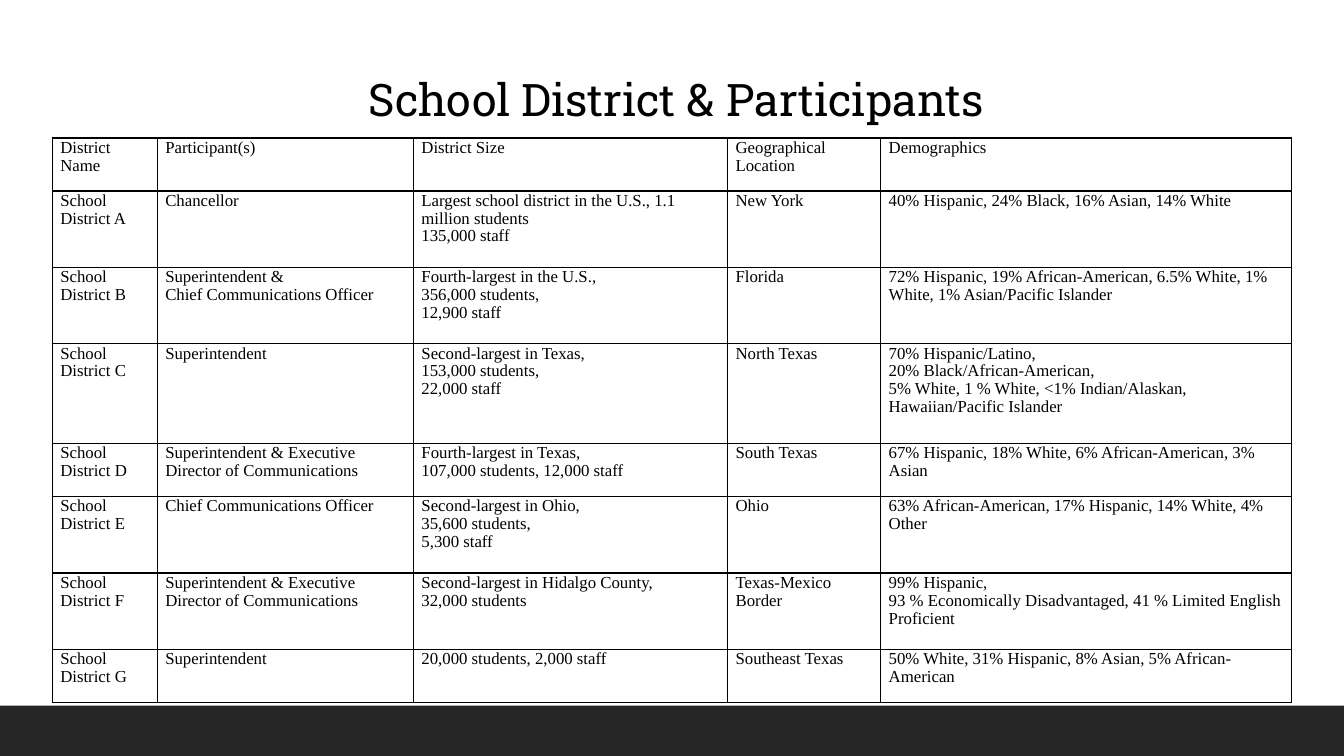
"""Build the slide that lists the school districts and their participants."""
from typing import Any, NamedTuple

from lxml import etree
from pptx import Presentation
from pptx.dml.color import RGBColor
from pptx.enum import shapes, text
from pptx.oxml import ns
from pptx.util import Pt

BLACK, CHARCOAL = "000000", "262626"
SLIDE_WIDTH, SLIDE_HEIGHT = 960, 540
FOOTER_HEIGHT = 36
COLUMN_WIDTHS = (75, 183, 224.4, 109.4, 293.6)
LINE_HEIGHT, ROW_PADDING = 16.8, 4.2
BORDER_WIDTH = 1
CELL_FORMAT = {
    "margin_left": Pt(5.7),
    "margin_right": Pt(5.7),
    "margin_top": Pt(0.7),
    "margin_bottom": Pt(0),
    "vertical_anchor": text.MSO_ANCHOR.TOP,
}
TITLE_FORMAT = {
    "word_wrap": True,
    "auto_size": text.MSO_AUTO_SIZE.NONE,
    "vertical_anchor": text.MSO_ANCHOR.TOP,
}


class District(NamedTuple):
    name: str
    participants: str
    size: str
    location: str
    demographics: str
    lines: int


DISTRICTS = [
    District("District Name", "Participant(s)", "District Size",
             "Geographical Location", "Demographics", 2),
    District("School District A", "Chancellor",
             "Largest school district in the U.S., 1.1 million students\n135,000 staff",
             "New York", "40% Hispanic, 24% Black, 16% Asian, 14% White", 3),
    District("School District B", "Superintendent &\nChief Communications Officer",
             "Fourth-largest in the U.S.,\n356,000 students,\n12,900 staff", "Florida",
             "72% Hispanic, 19% African-American, 6.5% White, 1% White, "
             "1% Asian/Pacific Islander", 3),
    District("School District C", "Superintendent",
             "Second-largest in Texas,\n153,000 students,\n22,000 staff", "North Texas",
             "70% Hispanic/Latino,\n20% Black/African-American,\n"
             "5% White, 1 % White, <1% Indian/Alaskan, Hawaiian/Pacific Islander", 4),
    District("School District D", "Superintendent & Executive Director of Communications",
             "Fourth-largest in Texas,\n107,000 students, 12,000 staff", "South Texas",
             "67% Hispanic, 18% White, 6% African-American, 3% Asian", 2),
    District("School District E", "Chief Communications Officer",
             "Second-largest in Ohio,\n35,600 students,\n5,300 staff", "Ohio",
             "63% African-American, 17% Hispanic, 14% White, 4% Other", 3),
    District("School District F", "Superintendent & Executive Director of Communications",
             "Second-largest in Hidalgo County,\n32,000 students", "Texas-Mexico Border",
             "99% Hispanic,\n93 % Economically Disadvantaged, "
             "41 % Limited English Proficient", 3),
    District("School District G", "Superintendent", "20,000 students, 2,000 staff",
             "Southeast Texas", "50% White, 31% Hispanic, 8% Asian, 5% African-American", 2),
]


def apply_format(target: Any, values: dict[str, Any]) -> None:
    for attribute, value in values.items():
        setattr(target, attribute, value)


def paint(color_format: Any, hex_color: str) -> None:
    color_format.rgb = RGBColor.from_string(hex_color)


def style_paragraph(paragraph: Any, typeface: str, size: float, spacing: float) -> None:
    apply_format(paragraph, {"alignment": text.PP_ALIGN.LEFT, "line_spacing": spacing})
    for run in paragraph.runs:
        apply_format(run.font, {"name": typeface, "size": Pt(size)})
        paint(run.font.color, BLACK)


def add_borders(cell: Any) -> None:
    properties = cell._tc.get_or_add_tcPr()
    for position, side in enumerate(("lnL", "lnR", "lnT", "lnB")):
        border = etree.Element(ns.qn(f"a:{side}"), w=str(Pt(BORDER_WIDTH)))
        fill = etree.SubElement(border, ns.qn("a:solidFill"))
        etree.SubElement(fill, ns.qn("a:srgbClr"), val=BLACK)
        properties.insert(position, border)


def add_footer(slide: Any) -> None:
    footer = slide.shapes.add_shape(
        shapes.MSO_SHAPE.RECTANGLE, Pt(0), Pt(SLIDE_HEIGHT - FOOTER_HEIGHT),
        Pt(SLIDE_WIDTH), Pt(FOOTER_HEIGHT))
    footer.shadow.inherit = False
    footer.fill.solid()
    paint(footer.fill.fore_color, CHARCOAL)
    footer.line.fill.background()


def add_heading(slide: Any) -> None:
    heading = slide.shapes.title
    apply_format(heading, {"left": Pt(256.3), "top": Pt(47.5),
                           "width": Pt(507), "height": Pt(46)})
    heading.text_frame.text = "School District & Participants"
    apply_format(heading.text_frame, TITLE_FORMAT)
    style_paragraph(heading.text_frame.paragraphs[0], "Roboto Slab", 32, 1)


def add_district_table(slide: Any, districts: list[District]) -> None:
    heights = [district.lines * LINE_HEIGHT + ROW_PADDING for district in districts]
    table = slide.shapes.add_table(
        len(districts), len(COLUMN_WIDTHS), Pt(37.4), Pt(98.6),
        Pt(sum(COLUMN_WIDTHS)), Pt(sum(heights))).table
    apply_format(table, {"first_row": False, "horz_banding": False})
    for column, width in zip(table.columns, COLUMN_WIDTHS):
        column.width = Pt(width)
    for row, district, height in zip(table.rows, districts, heights):
        row.height = Pt(height)
        for cell, wording in zip(row.cells, district[:-1]):
            cell.text = wording
            apply_format(cell, CELL_FORMAT)
            cell.fill.background()
            add_borders(cell)
            for paragraph in cell.text_frame.paragraphs:
                style_paragraph(paragraph, "Times New Roman", 12, 0.96)


def main() -> None:
    presentation = Presentation()
    apply_format(presentation, {"slide_width": Pt(SLIDE_WIDTH),
                                "slide_height": Pt(SLIDE_HEIGHT)})
    slide = presentation.slides.add_slide(presentation.slide_layouts.get_by_name("Title Only"))
    add_footer(slide)
    add_heading(slide)
    add_district_table(slide, DISTRICTS)
    presentation.save("out.pptx")


if __name__ == "__main__":
    main()
